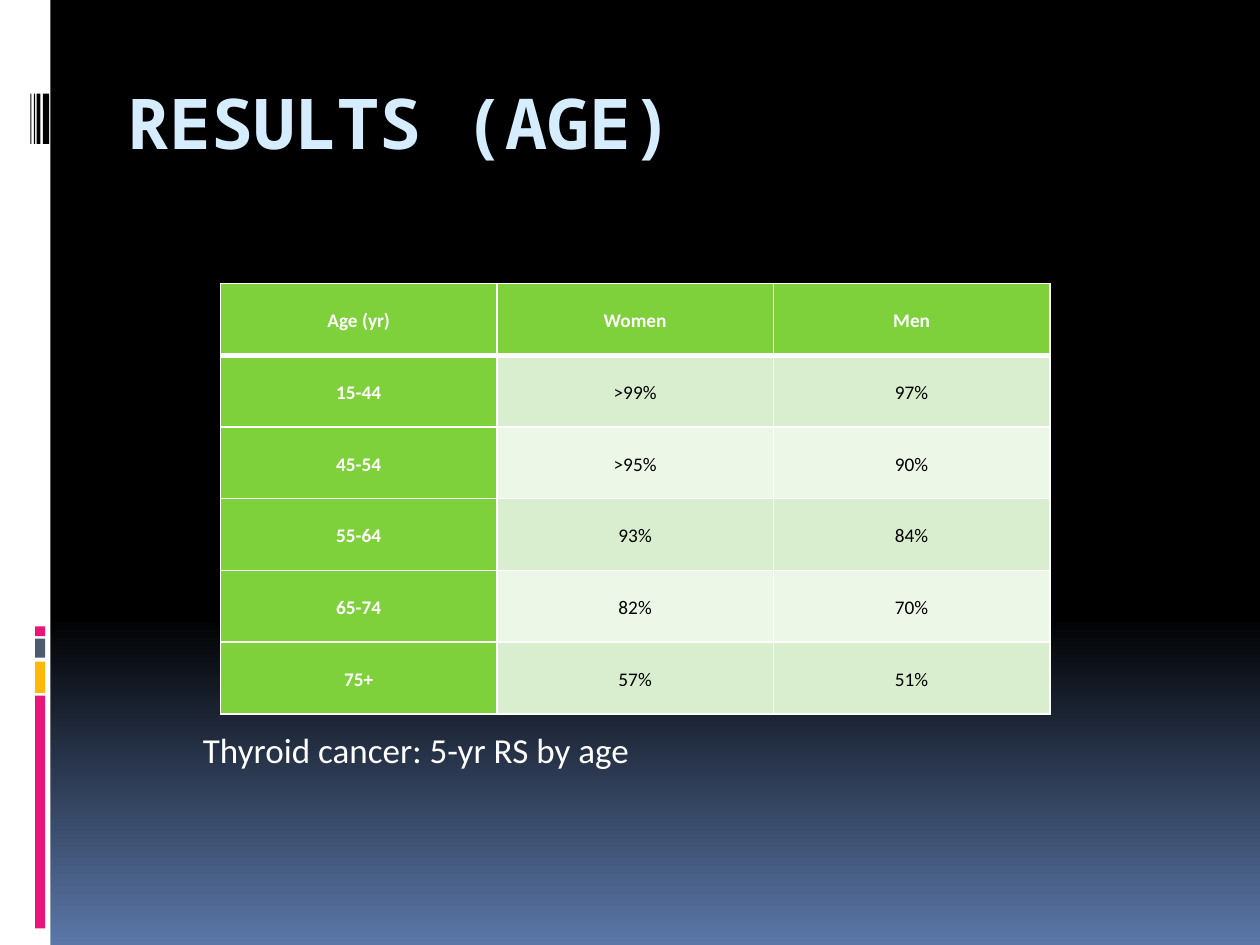
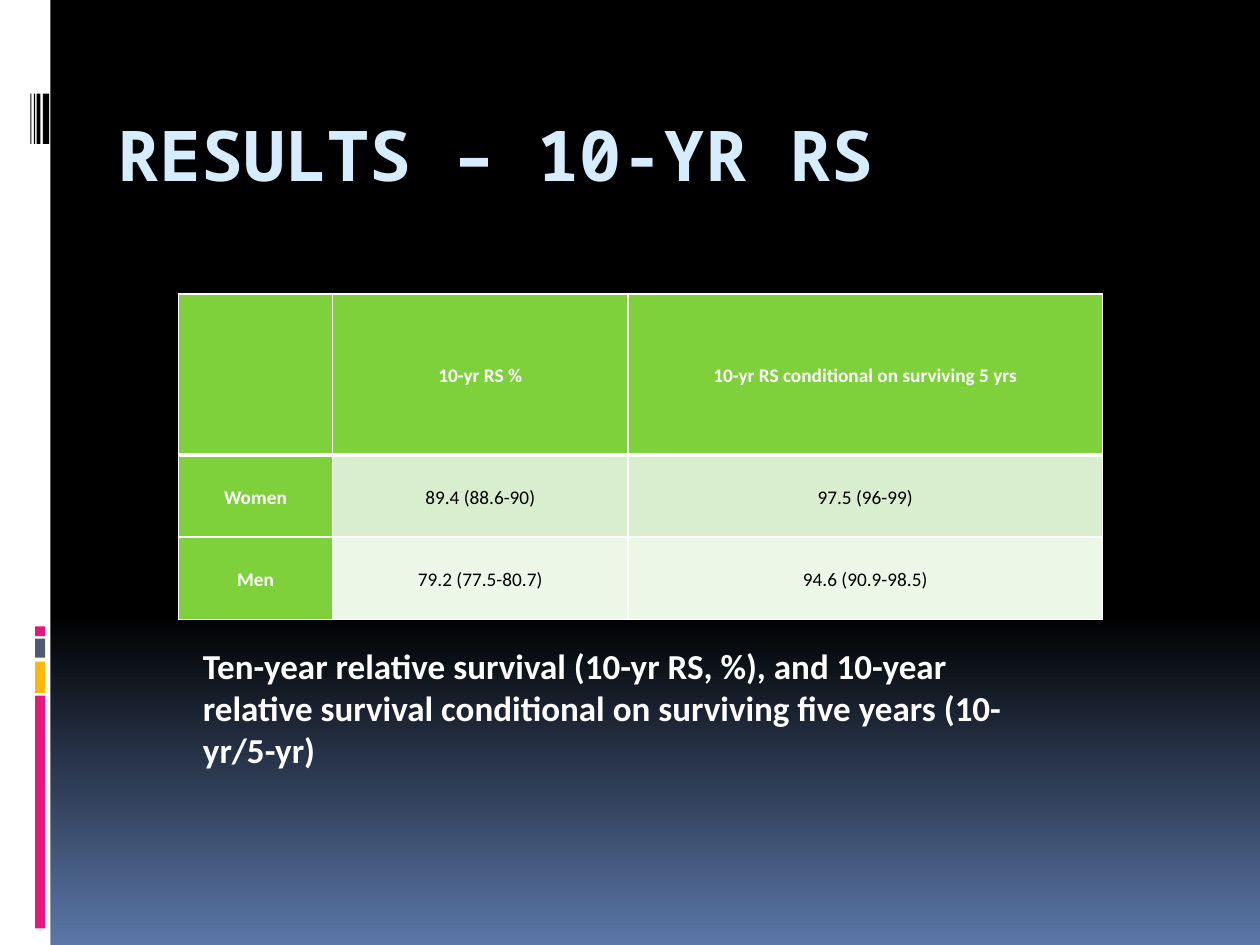
from copy import deepcopy

from lxml import etree
from pptx import Presentation
from pptx.dml.color import RGBColor
from pptx.enum import shapes, text
from pptx.oxml import ns
from pptx.util import Pt

WHITE, BLACK, SLATE_BLUE = "FFFFFF", "000000", "5B77A8"
PINK, AMBER, SLATE, ICE = "EA157A", "FEB80A", "4E5B6F", "D6ECFF"
GREEN, BAND_DARK, BAND_LIGHT = "7FD13B", "D8EECE", "ECF7E8"
TITLE_FONT, BODY_FONT = "Noto Sans Mono", "Calibri"
BARCODE = [(24.5, 3.6), (20.9, 2.2), (19.4, 0.7), (17.3, 0.7)]  # left, width
SIDE_BARS = [(397.5, 133, PINK), (378, 18, AMBER),
             (365, 10.8, SLATE), (358, 5.6, PINK)]  # top, height, colour


def rgb(value):
    return RGBColor.from_string(value)


def style(para, font, size, color, bold):
    para.font.name = font
    para.font.size = Pt(size)
    para.font.color.rgb = rgb(color)
    para.font.bold = bold


def set_background(master):
    """Black down to 65 %, then fading to blue at the bottom."""
    fill = master.background.fill
    fill.gradient()
    fill.gradient_angle = 270
    start, end = fill.gradient_stops
    start.color.rgb, start.position = rgb(BLACK), 0
    end.color.rgb, end.position = rgb(SLATE_BLUE), 1
    stops = master.element.find(".//" + ns.qn("a:gsLst"))
    middle = deepcopy(stops[0])
    middle.set("pos", "65000")
    stops.insert(1, middle)


def add_bar(page, left, top, width, height, color):
    bar = page.shapes.add_shape(shapes.MSO_SHAPE.RECTANGLE,
                                Pt(left), Pt(top), Pt(width), Pt(height))
    bar.shadow.inherit = False
    bar.fill.solid()
    bar.fill.fore_color.rgb = rgb(color)
    bar.line.fill.background()


def add_text(page, box, words, font, size, color, bold, anchor):
    frame = page.shapes.add_textbox(*map(Pt, box)).text_frame
    frame.word_wrap = True
    frame.vertical_anchor = anchor
    frame.paragraphs[0].text = words
    style(frame.paragraphs[0], font, size, color, bold)
    return frame


def add_title(page, left, top, height, words):
    add_text(page, (left, top, 612, height), words, TITLE_FONT, 40, ICE, True,
             text.MSO_ANCHOR.TOP)


def add_caption(page, top, words, bold=False):
    """Text resting on the common caption bottom line."""
    frame = add_text(page, (108, top, 504, 444 - top), words, BODY_FONT, 20,
                     WHITE, bold, text.MSO_ANCHOR.BOTTOM)
    frame.margin_left = Pt(8)


def set_borders(cell, **widths):
    properties = cell._tc.get_or_add_tcPr()
    for side in "LRTB":
        line = etree.SubElement(properties, ns.qn("a:ln" + side),
                                w=str(Pt(widths.get(side, 1))))
        fill = etree.SubElement(line, ns.qn("a:solidFill"))
        etree.SubElement(fill, ns.qn("a:srgbClr"), val=WHITE)


def fill_cell(cell, words, row, column):
    heading = row == 0 or column == 0
    band = BAND_DARK if row % 2 else BAND_LIGHT
    set_borders(cell, **{0: {"B": 3}, 1: {"T": 3}}.get(row, {}))
    cell.fill.solid()
    cell.fill.fore_color.rgb = rgb(GREEN if heading else band)
    cell.vertical_anchor = text.MSO_ANCHOR.MIDDLE
    cell.margin_left = cell.margin_right = Pt(5)
    cell.margin_top = cell.margin_bottom = 0
    para = cell.text_frame.paragraphs[0]
    para.text = words
    para.alignment = text.PP_ALIGN.CENTER
    para.line_spacing = 1.15
    style(para, BODY_FONT, 11, WHITE if heading else BLACK, heading)


def add_survival_table(page, left, top, widths, heights, rows):
    table = page.shapes.add_table(len(heights), len(widths), Pt(left), Pt(top),
                                  Pt(sum(widths)), Pt(sum(heights))).table
    for column, width in zip(table.columns, widths):
        column.width = Pt(width)
    for row, height in zip(table.rows, heights):
        row.height = Pt(height)
    for r, values in enumerate(rows):
        for c, words in enumerate(values):
            fill_cell(table.cell(r, c), words, r, c)


def add_page(deck):
    """Blank page with the white side band and its bars."""
    page = deck.slides.add_slide(deck.slide_layouts[6])
    add_bar(page, 0, 0, 28.8, 540, WHITE)
    for left, width in BARCODE:
        add_bar(page, left, 53.5, width, 28.8, BLACK)
    for top, height, color in SIDE_BARS:
        add_bar(page, 20, top, 5.8, height, color)
    return page


def add_age_page(deck):
    page = add_page(deck)
    add_title(page, 66, 42, 116, "RESULTS (AGE)")
    add_caption(page, 144, "Thyroid cancer: 5-yr RS by age")
    add_survival_table(page, 126, 162, [158] * 3, [41] * 6, [
        ("Age (yr)", "Women", "Men"),
        ("15-44", ">99%", "97%"),
        ("45-54", ">95%", "90%"),
        ("55-64", "93%", "84%"),
        ("65-74", "82%", "70%"),
        ("75+", "57%", "51%"),
    ])


def add_ten_year_page(deck):
    page = add_page(deck)
    add_title(page, 60, 60, 90, "RESULTS – 10-YR RS")
    add_caption(page, 162, "Ten-year relative survival (10-yr RS, %), and "
                "10-year relative survival conditional on surviving five "
                "years (10-yr/5-yr)", bold=True)
    add_survival_table(page, 102, 168, [88, 169, 271], [92, 47, 47], [
        ("", "10-yr RS %", "10-yr RS conditional on surviving 5 yrs"),
        ("Women", "89.4 (88.6-90)", "97.5 (96-99)"),
        ("Men", "79.2 (77.5-80.7)", "94.6 (90.9-98.5)"),
    ])


def main():
    deck = Presentation()
    deck.slide_width, deck.slide_height = Pt(720), Pt(540)
    set_background(deck.slide_master)
    add_age_page(deck)
    add_ten_year_page(deck)
    deck.save("out.pptx")


if __name__ == "__main__":
    main()
